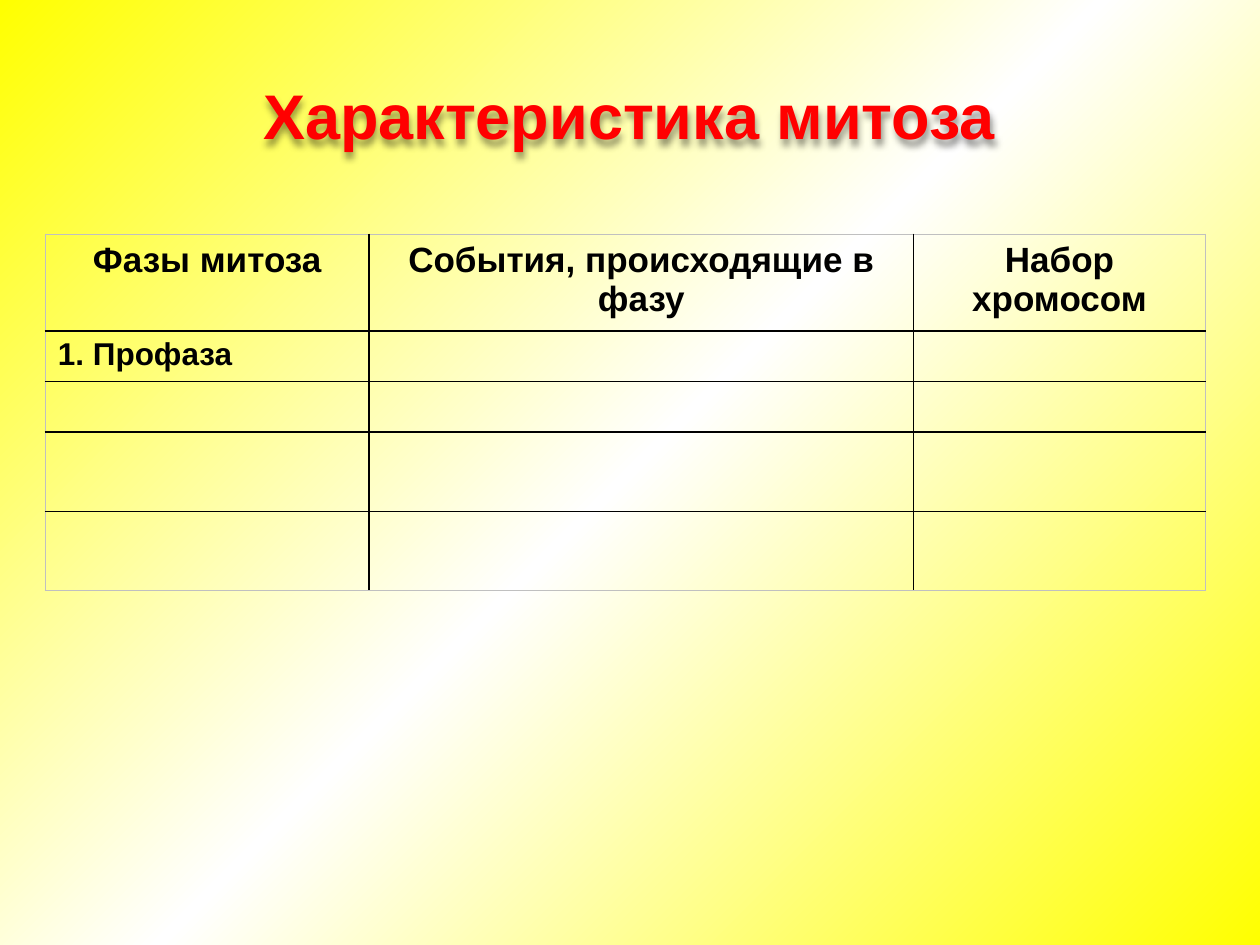
from copy import deepcopy

from lxml import etree
from pptx import Presentation
from pptx.dml.color import RGBColor
from pptx.enum.text import MSO_ANCHOR as Anchor, MSO_AUTO_SIZE as AutoSize, PP_ALIGN as Align
from pptx.oxml import parse_xml
from pptx.oxml.ns import nsdecls, qn
from pptx.util import Inches, Pt

YELLOW = RGBColor(0xFF, 0xFF, 0x00)
WHITE = RGBColor(0xFF, 0xFF, 0xFF)
RED = RGBColor(0xFF, 0x00, 0x00)
BLACK = RGBColor(0x00, 0x00, 0x00)
GREY = RGBColor(0xC0, 0xC0, 0xC0)
FONT = "Arial"

TITLE_BOX = (1.85, 0.52, 6.29, 0.78)
TABLE_BOX = (0.36, 1.86, 9.21, 2.82)
COLUMN_WIDTHS = (2.57, 4.32, 2.32)
ROW_HEIGHTS = (0.76, 0.4, 0.4, 0.63, 0.63)
HEADINGS = ("Фазы митоза", "События, происходящие в фазу", "Набор\nхромосом")
FIRST_PHASE = "1. Профаза"


def paint_background(page):
    """Fill the page with a diagonal yellow, white, yellow gradient."""
    fill = page.background.fill
    fill.gradient()
    fill.gradient_angle = 315
    stops = page.element.find(".//" + qn("a:gsLst"))
    stops.append(deepcopy(stops[0]))
    colors = (YELLOW, WHITE, YELLOW)
    for index, (stop, color) in enumerate(zip(fill.gradient_stops, colors)):
        stop.color.rgb = color
        stop.position = index / 2


def format_text(frame, size, color, align):
    """Give every paragraph of a text frame one bold style."""
    for para in frame.paragraphs:
        para.alignment = align
        for span in para.runs:
            span.font.name = FONT
            span.font.size = Pt(size)
            span.font.bold = True
            span.font.color.rgb = color


def add_title(page, box):
    """Place the red title with its rounded box and soft shadow."""
    title = page.shapes.title
    title.left, title.top, title.width, title.height = map(Inches, box)
    frame = title.text_frame
    frame.text = "Характеристика митоза"
    frame.vertical_anchor = Anchor.MIDDLE
    frame.auto_size = AutoSize.SHAPE_TO_FIT_TEXT
    format_text(frame, 36, RED, Align.CENTER)
    properties = title.element.spPr
    properties.append(parse_xml(
        f'<a:prstGeom {nsdecls("a")} prst="roundRect"><a:avLst/></a:prstGeom>'))
    title.fill.background()
    properties.append(parse_xml(
        f'<a:effectLst {nsdecls("a")}>'
        '<a:outerShdw blurRad="50800" dist="38100" dir="5400000">'
        '<a:srgbClr val="000000"><a:alpha val="40000"/></a:srgbClr>'
        '</a:outerShdw></a:effectLst>'))


def set_borders(cell, borders):
    """Draw the cell's borders, given as (side, color) in schema order."""
    properties = cell._tc.get_or_add_tcPr()
    for side, color in borders:
        line = etree.SubElement(properties, qn(f"a:ln{side}"), w=str(Pt(1)))
        solid = etree.SubElement(line, qn("a:solidFill"))
        etree.SubElement(solid, qn("a:srgbClr"), val=str(color))


def add_phase_table(page, box):
    """Place the table of mitosis phases in the given box."""
    rows, columns = len(ROW_HEIGHTS), len(COLUMN_WIDTHS)
    table = page.shapes.add_table(rows, columns, *map(Inches, box)).table
    table.first_row = table.horz_banding = False
    for column, width in zip(table.columns, COLUMN_WIDTHS):
        column.width = Inches(width)
    for row, height in zip(table.rows, ROW_HEIGHTS):
        row.height = Inches(height)
    for r in range(rows):
        for c in range(columns):
            cell = table.cell(r, c)
            set_borders(cell, (
                ("L", BLACK if c else GREY),
                ("R", BLACK if c < columns - 1 else GREY),
                ("T", BLACK if r else GREY),
                ("B", BLACK if r < rows - 1 else GREY)))
            cell.fill.background()
    for c, heading in enumerate(HEADINGS):
        frame = table.cell(0, c).text_frame
        frame.text = heading
        format_text(frame, 20, BLACK, Align.CENTER)
    frame = table.cell(1, 0).text_frame
    frame.text = FIRST_PHASE
    format_text(frame, 18, BLACK, Align.LEFT)


def main():
    """Build and save the slide."""
    deck = Presentation()
    deck.slide_width, deck.slide_height = Inches(10), Inches(7.5)
    page = deck.slides.add_slide(deck.slide_layouts[5])
    paint_background(page)
    add_title(page, TITLE_BOX)
    add_phase_table(page, TABLE_BOX)
    deck.save("out.pptx")


if __name__ == "__main__":
    main()
